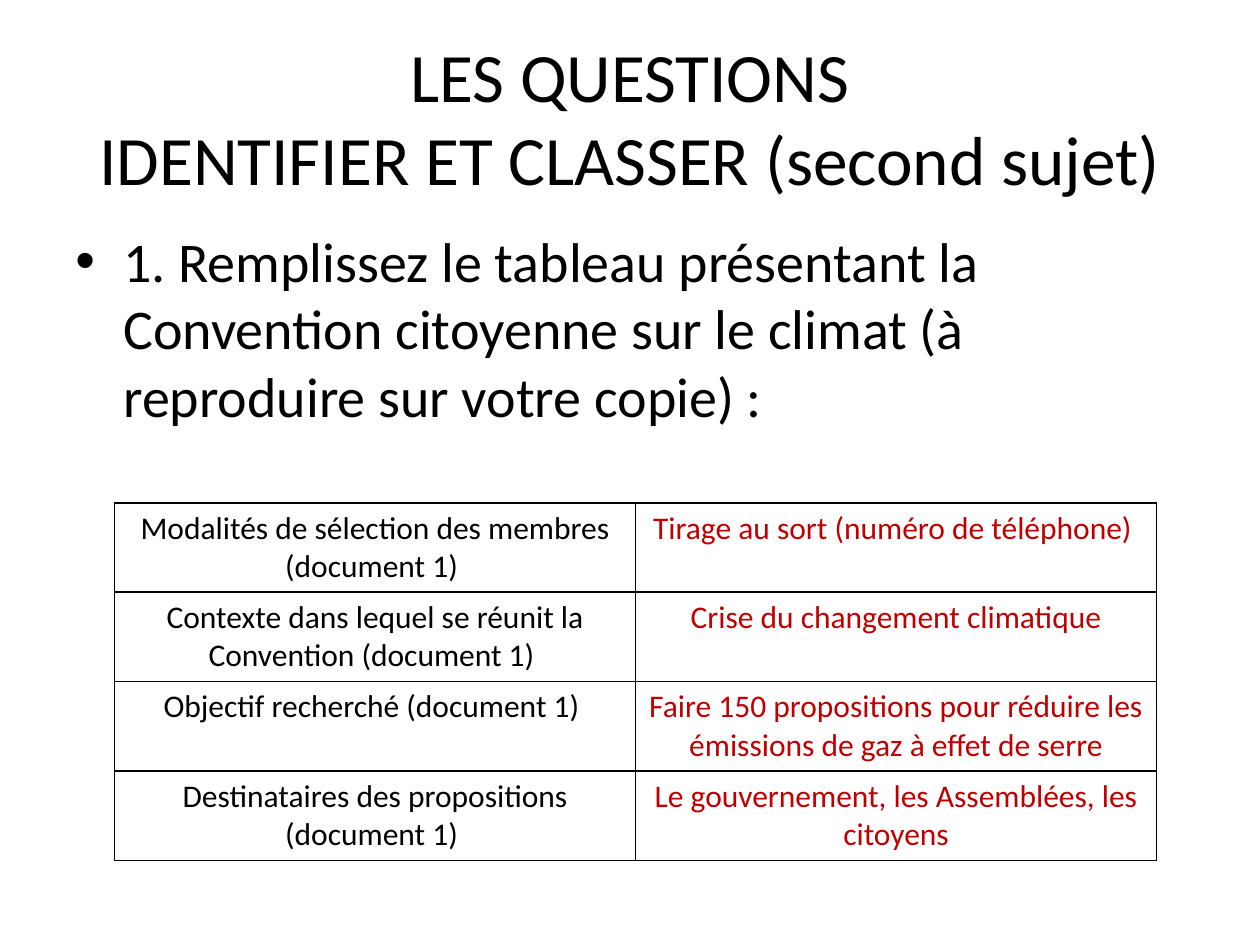
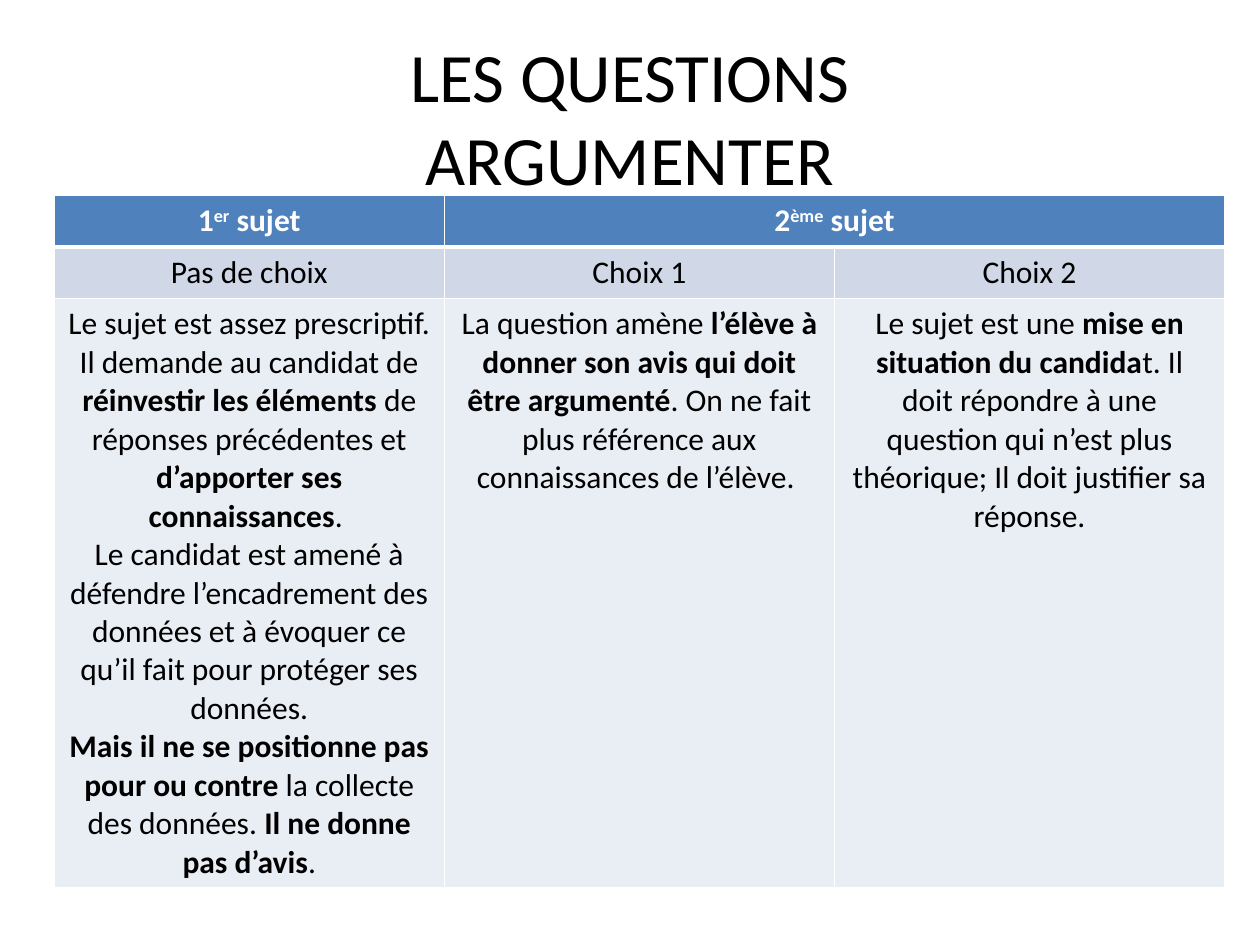
import pptx
import pptx.dml.color
import pptx.enum.text
import pptx.oxml
import pptx.oxml.ns
import pptx.util

SCALE = 9144
FONT = "Calibri"
COLORS = {
    "ink": "000000",
    "paper": "FFFFFF",
    "answer": "C00000",
    "header": "4F81BD",
    "choice": "D0D8E8",
    "detail": "E9EDF4",
}
TITLE_BOX = (50, 30, 900, 125)
CENTER = pptx.enum.text.PP_ALIGN.CENTER

CONVENTION = [
    ("Modalités de sélection des membres (document 1) ", "Tirage au sort (numéro de téléphone) "),
    ("Contexte dans lequel se réunit la Convention (document 1) ", "Crise du changement climatique"),
    ("Objectif recherché (document 1) ",
     "Faire 150 propositions pour réduire les émissions de gaz à effet de serre"),
    ("Destinataires des propositions (document 1) ", "Le gouvernement, les Assemblées, les citoyens"),
]
SUBJECTS = [[("1", "bold"), ("er", "bold super"), (" sujet", "bold")],
            [("2", "bold"), ("ème", "bold super"), (" sujet", "bold")]]
CHOICES = ["Pas de choix", "Choix 1", "Choix 2"]
DETAILS = [
    [
        [("Le sujet est assez prescriptif. Il demande au candidat de ", ""),
         ("réinvestir les éléments ", "bold"),
         ("de réponses précédentes et ", ""),
         ("d’apporter ses connaissances", "bold"),
         (". ", "")],
        [("Le candidat est amené à défendre l’encadrement des données et à évoquer "
          "ce qu’il fait pour protéger ses données.", "")],
        [("Mais il ne se positionne pas pour ou contre ", "bold"),
         ("la collecte des données. ", ""),
         ("Il ne donne pas d’avis", "bold"),
         (".", "")],
    ],
    [
        [("La question amène ", ""),
         ("l’élève à donner son avis qui doit être argumenté", "bold"),
         (". On ne fait plus référence aux connaissances de l’élève. ", "")],
    ],
    [
        [("Le sujet est une ", ""),
         ("mise en situation du candida", "bold"),
         ("t. Il doit répondre à une question qui n’est plus théorique; "
          "Il doit justifier sa réponse.", "")],
    ],
]


def px(length):
    """Turn a length in px into EMU."""
    return pptx.util.Emu(length * SCALE)


def rgb(name):
    """Look up a named colour."""
    return pptx.dml.color.RGBColor.from_string(COLORS[name])


def add_span(para, text, size, color="ink", style=""):
    """Append one formatted run to a paragraph."""
    span = para.add_run()
    span.text = text
    span.font.name = FONT
    span.font.size = pptx.util.Pt(size)
    span.font.color.rgb = rgb(color)
    span.font.bold = "bold" in style
    if "super" in style:
        span.font._element.set("baseline", "30000")


def add_page(deck, title_lines):
    """Add a title-only slide and fill its title."""
    page = deck.slides.add_slide(deck.slide_layouts[5])
    title = page.shapes.title
    title.left, title.top, title.width, title.height = map(px, TITLE_BOX)
    frame = title.text_frame
    frame.auto_size = pptx.enum.text.MSO_AUTO_SIZE.NONE
    frame.vertical_anchor = pptx.enum.text.MSO_ANCHOR.MIDDLE
    para = frame.paragraphs[0]
    para.alignment = CENTER
    for index, line in enumerate(title_lines):
        if index:
            para.add_line_break()
        add_span(para, line, 39.6)
    return page


def add_bullet(page, box, text):
    """Add a text box holding one bulleted paragraph."""
    frame = page.shapes.add_textbox(*map(px, box)).text_frame
    frame.word_wrap = True
    para = frame.paragraphs[0]
    add_span(para, text, 32)
    props = para._p.get_or_add_pPr()
    props.set("marL", str(px(38)))
    props.set("indent", str(px(-38)))
    namespace = pptx.oxml.ns.nsdecls("a")
    props.append(pptx.oxml.parse_xml(f'<a:buFont {namespace} typeface="Arial"/>'))
    props.append(pptx.oxml.parse_xml(f'<a:buChar {namespace} char="•"/>'))


def add_grid(page, box, row_heights, column_count):
    """Add an unstyled table with equal columns."""
    table = page.shapes.add_table(len(row_heights), column_count, *map(px, box)).table
    table.first_row = table.horz_banding = False
    for column in table.columns:
        column.width = px(box[2]) // column_count
    for row, height in zip(table.rows, row_heights):
        row.height = px(height)
    return table


def set_cell(cell, fill, border, widths=(1, 1, 1, 1)):
    """Fill a cell and draw its left, right, top and bottom borders."""
    cell.fill.solid()
    cell.fill.fore_color.rgb = rgb(fill)
    props = cell._tc.get_or_add_tcPr()
    for index, (side, width) in enumerate(zip("LRTB", widths)):
        line = pptx.oxml.parse_xml(
            f'<a:ln{side} {pptx.oxml.ns.nsdecls("a")} w="{pptx.util.Pt(width)}">'
            f'<a:solidFill><a:srgbClr val="{COLORS[border]}"/></a:solidFill></a:ln{side}>')
        props.insert(index, line)


def write_cell(cell, paragraphs, color="ink"):
    """Write centred paragraphs of styled spans into a cell."""
    frame = cell.text_frame
    for index, spans in enumerate(paragraphs):
        para = frame.add_paragraph() if index else frame.paragraphs[0]
        para.alignment = CENTER
        for text, style in spans:
            add_span(para, text, 18, color, style)


def add_convention_table(page, box):
    """Add the table of questions and answers on the convention."""
    row_count = len(CONVENTION)
    table = add_grid(page, box, [box[3] // row_count] * row_count, 2)
    for row, texts in enumerate(CONVENTION):
        for column, (text, color) in enumerate(zip(texts, ("ink", "answer"))):
            cell = table.cell(row, column)
            set_cell(cell, "paper", "ink")
            write_cell(cell, [[(text, "")]], color)


def add_subject_table(page, box):
    """Add the table comparing the two subjects."""
    label_height = 41
    heights = [label_height, label_height, box[3] - 2 * label_height]
    table = add_grid(page, box, heights, 3)
    for column, (choice, detail) in enumerate(zip(CHOICES, DETAILS)):
        set_cell(table.cell(0, column), "header", "paper", (1, 1, 1, 3))
        set_cell(table.cell(1, column), "choice", "paper", (1, 1, 3, 1))
        set_cell(table.cell(2, column), "detail", "paper")
        write_cell(table.cell(1, column), [[(choice, "")]])
        write_cell(table.cell(2, column), detail)
    table.cell(0, 1).merge(table.cell(0, 2))
    for column, spans in enumerate(SUBJECTS):
        write_cell(table.cell(0, column), [spans], "paper")


def build_classify_page(deck):
    """Build the slide on identifying and classifying."""
    page = add_page(deck, ["LES QUESTIONS", "IDENTIFIER ET CLASSER (second sujet)"])
    add_bullet(page, (50, 175, 900, 495),
               "1. Remplissez le tableau présentant la Convention citoyenne sur le climat "
               "(à reproduire sur votre copie) :")
    add_convention_table(page, (91, 399, 827, 284))


def build_argue_page(deck):
    """Build the slide on arguing."""
    page = add_page(deck, ["LES QUESTIONS", "ARGUMENTER"])
    add_subject_table(page, (43, 155, 929, 548))


def main():
    """Build and save the deck."""
    deck = pptx.Presentation()
    deck.slide_width, deck.slide_height = px(1000), px(750)
    build_classify_page(deck)
    build_argue_page(deck)
    deck.save("out.pptx")


if __name__ == "__main__":
    main()
